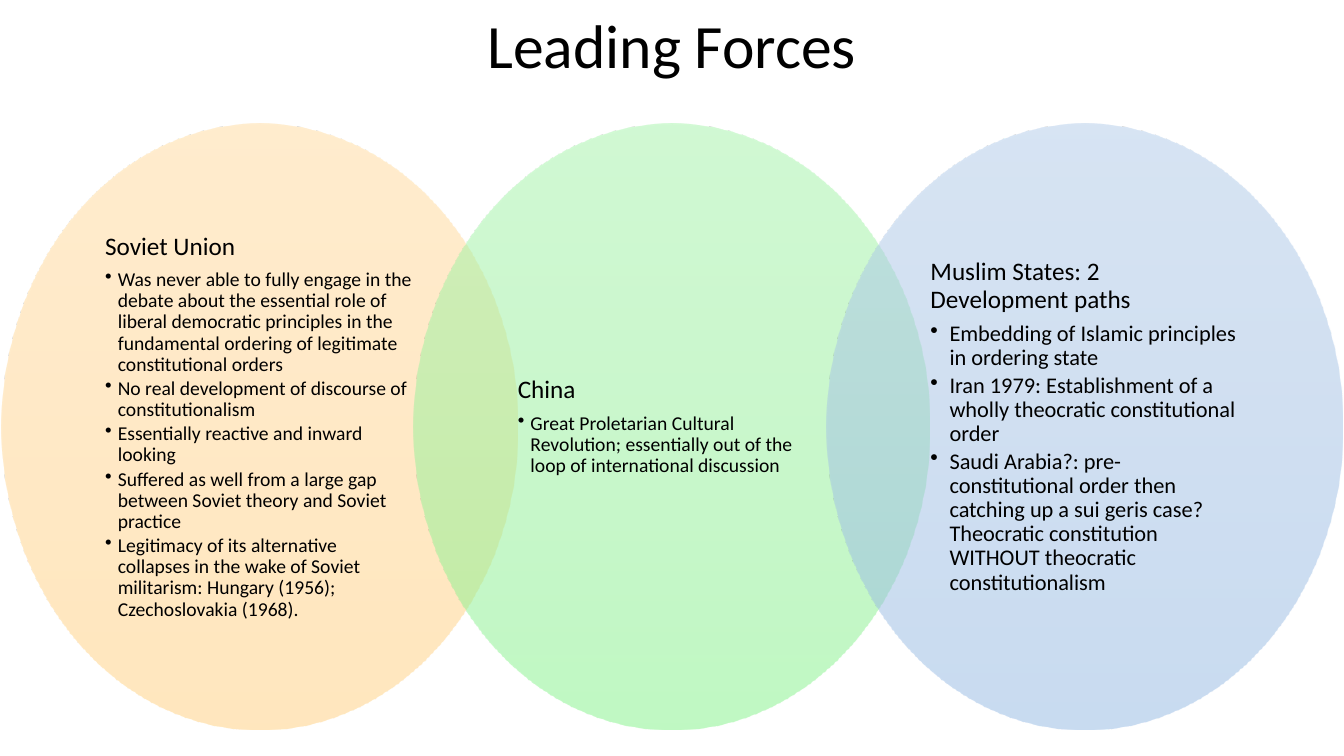
from dataclasses import dataclass

from lxml import etree
from pptx import Presentation
from pptx import util as u
from pptx.dml.color import RGBColor
from pptx.enum import shapes, text
from pptx.oxml.ns import qn


@dataclass(frozen=True)
class Theme:
    font: str = "Calibri"
    ink: str = "000000"
    title_size: int = 44
    heading_size: int = 18
    alpha: int = 50
    orange: tuple[str, ...] = ("FFDB9E", "FFD590", "FFD07C")
    green: tuple[str, ...] = ("A4F4A9", "96F19B", "82F388")
    blue: tuple[str, ...] = ("B1CBE9", "A3C1E5", "93B9E4")


@dataclass(frozen=True)
class Force:
    heading: str
    points: tuple[str, ...]
    colors: tuple[str, ...]
    size: int = 14
    indent: float = 0.32
    inset: float = 0.07


THEME = Theme()
LEFT, TOP, WIDTH, HEIGHT, PITCH = 0.03, 3.12, 13.0, 15.27, 10.4
TEXT_DX, TEXT_TOP, TEXT_W, TEXT_H, TEXT_INSET = 1.91, 5.36, 9.2, 10.8, 0.71

FORCES = (
    Force("Soviet Union", (
        "Was never able to fully engage in the debate about the essential role of liberal "
        "democratic principles in the fundamental ordering of legitimate constitutional orders",
        "No real development of discourse of constitutionalism",
        "Essentially reactive and inward looking",
        "Suffered as well from a large gap between Soviet theory and Soviet practice",
        "Legitimacy of its alternative collapses in the wake of Soviet militarism: "
        "Hungary (1956); Czechoslovakia (1968).",
    ), THEME.orange),
    Force("China", (
        "Great Proletarian Cultural Revolution; essentially out of the loop of "
        "international discussion",
    ), THEME.green),
    Force("Muslim States: 2 Development paths", (
        "Embedding of Islamic principles in ordering state",
        "Iran 1979: Establishment of a wholly theocratic constitutional order",
        "Saudi Arabia?: pre-constitutional order then catching up a sui geris case? "
        "Theocratic constitution WITHOUT theocratic constitutionalism",
    ), THEME.blue, size=16, indent=0.48, inset=0.05),
)


def add_run(p, content: str, size: int) -> None:
    p.line_spacing = 0.9
    r = p.add_run()
    r.text = content
    r.font.name = THEME.font
    r.font.size = u.Pt(size)
    r.font.color.rgb = RGBColor.from_string(THEME.ink)


def set_bullet(p, indent: float) -> None:
    p.level = 1
    pPr = p._p.get_or_add_pPr()
    pPr.set("marL", str(u.Cm(indent)))
    pPr.set("indent", str(-u.Cm(indent)))
    etree.SubElement(pPr, qn("a:buChar"), char="•")


def set_gradient(sp, colors: tuple[str, ...]) -> None:
    sp.fill.gradient()
    sp.fill.gradient_angle = 270
    stops = sp._element.spPr.find(qn("a:gradFill")).find(qn("a:gsLst"))
    for stop in list(stops):
        stops.remove(stop)
    for i, color in enumerate(colors):
        gs = etree.SubElement(stops, qn("a:gs"), pos=str(i * 100000 // (len(colors) - 1)))
        clr = etree.SubElement(gs, qn("a:srgbClr"), val=color)
        etree.SubElement(clr, qn("a:alpha"), val=str(THEME.alpha * 1000))


def add_force(s, force: Force, left: float) -> None:
    sp = s.shapes.add_shape(shapes.MSO_SHAPE.OVAL, u.Cm(left), u.Cm(TOP), u.Cm(WIDTH), u.Cm(HEIGHT))
    sp.shadow.inherit = False
    sp.line.fill.background()
    set_gradient(sp, force.colors)

    box = s.shapes.add_textbox(u.Cm(left + TEXT_DX), u.Cm(TEXT_TOP), u.Cm(TEXT_W), u.Cm(TEXT_H))
    tf = box.text_frame
    tf.word_wrap = True
    tf.vertical_anchor = text.MSO_ANCHOR.MIDDLE
    tf.margin_left = tf.margin_right = u.Cm(TEXT_INSET)
    tf.margin_top = tf.margin_bottom = u.Cm(force.inset)
    p = tf.paragraphs[0]
    add_run(p, force.heading, THEME.heading_size)
    p.space_after = u.Pt(THEME.heading_size * 0.35)
    for point in force.points:
        p = tf.add_paragraph()
        p.space_before = u.Pt(0)
        p.space_after = u.Pt(force.size * 0.15)
        set_bullet(p, force.indent)
        add_run(p, point, force.size)


def add_title(s, content: str) -> None:
    title = s.shapes.title
    title.left, title.top, title.width, title.height = u.Cm(2.33), u.Cm(0), u.Cm(29.21), u.Cm(2.46)
    tf = title.text_frame
    tf.word_wrap = True
    tf.vertical_anchor = text.MSO_ANCHOR.MIDDLE
    p = tf.paragraphs[0]
    p.alignment = text.PP_ALIGN.CENTER
    add_run(p, content, THEME.title_size)


def main() -> None:
    prs = Presentation()
    prs.slide_width, prs.slide_height = u.Cm(33.87), u.Cm(19.05)
    s = prs.slides.add_slide(prs.slide_layouts[5])
    add_title(s, "Leading Forces")
    for i, force in enumerate(FORCES):
        add_force(s, force, LEFT + i * PITCH)
    prs.save("out.pptx")


if __name__ == "__main__":
    main()
